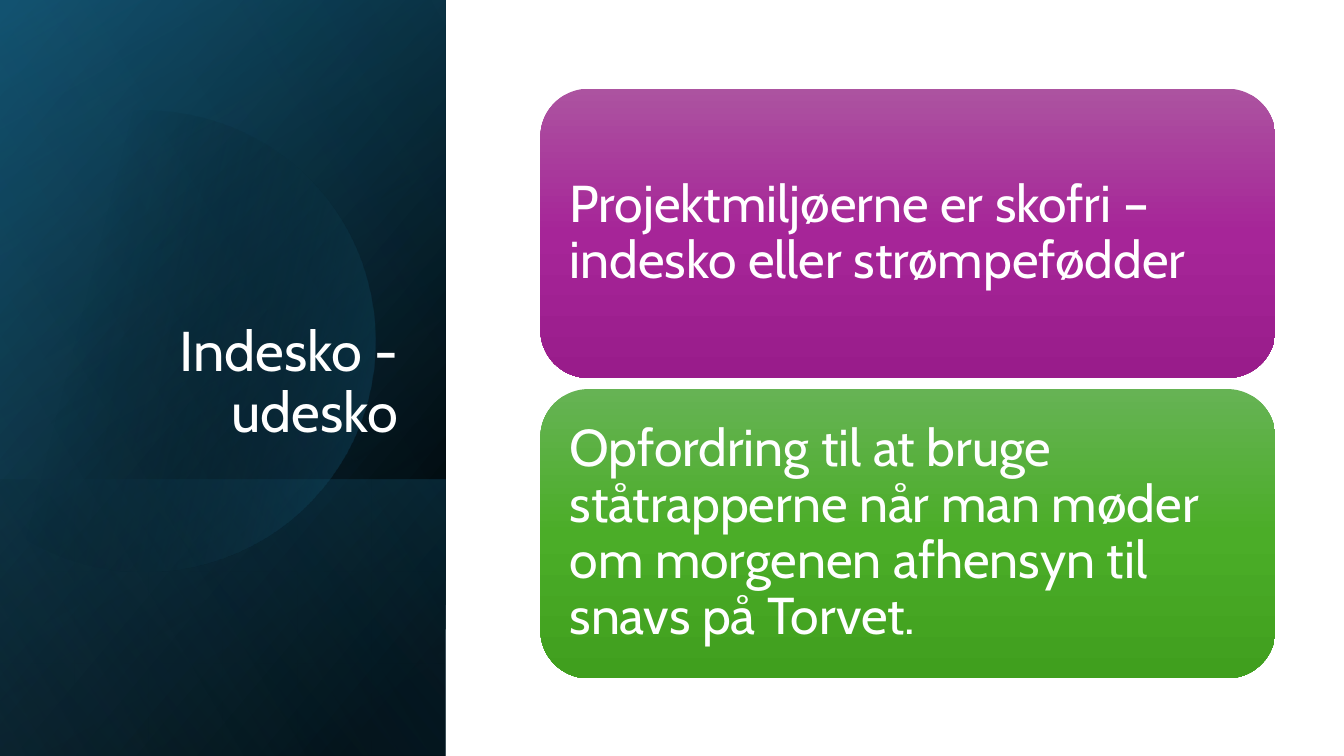
import dataclasses

import pptx
import pptx.dml.color
import pptx.enum.shapes
import pptx.enum.text
import pptx.oxml
import pptx.oxml.ns
import pptx.util

SCALE = 9144
SHAPES = pptx.enum.shapes.MSO_SHAPE
ALIGN = pptx.enum.text.PP_ALIGN
ANCHOR = pptx.enum.text.MSO_ANCHOR


@dataclasses.dataclass(frozen=True)
class Theme:
    font: str = "Cabin"
    white: str = "FFFFFF"
    black: str = "000000"
    navy: str = "104862"
    teal: str = "156082"
    sky: str = "46B1E1"
    purple: tuple = ("AC53A0", "A62598", "991C8B")
    green: tuple = ("66B354", "4BAD28", "409F1E")
    title_size: int = 40
    card_size: int = 37


THEME = Theme()

PANEL_BOX = (-154, 154, 750, 442)
PANELS_BEHIND = (
    (PANEL_BOX, ((8, THEME.black, 100), (100, THEME.navy, 100)), 50),
    (PANEL_BOX, ((0, THEME.black, 0), (99, THEME.teal, 46)), 30),
    ((84, 392, 274, 442), ((2, THEME.teal, 29), (100, THEME.black, 30)), 130),
)
PANEL_FRONT = (PANEL_BOX, ((0, THEME.black, 0), (99, THEME.sky, 11)), 120)

DISC_START = (149, 110)
DISC_CURVES = (
    ((246, 112), (335, 177), (363, 275)),
    ((398, 397), (328, 523), (207, 558)),
    ((131, 580), (53, 561), (-3, 514)),
    ((-15, 503),),
    ((-15, 175),),
    ((0, 161),),
    ((23, 142), (50, 128), (80, 119)),
    ((103, 113), (126, 110), (149, 110)),
)
DISC_STOPS = ((29, THEME.black, 0), (100, THEME.teal, 43))

CARD_LEFT, CARD_TOP, CARD_WIDTH, CARD_HEIGHT = 536, 88, 729, 287
CARD_PITCH = 298
CARD_INSET = 15
CARDS = (
    ("Projektmiljøerne er skofri – indesko eller strømpefødder", THEME.purple),
    ("Opfordring til at bruge ståtrapperne når man møder om morgenen "
     "afhensyn til snavs på Torvet.", THEME.green),
)


def px(value):
    return pptx.util.Emu(round(value * SCALE))


def set_values(target, values):
    for name, value in values.items():
        setattr(target, name, value)


def fill_gradient(shape, stops, angle):
    shape.shadow.inherit = False
    shape.line.fill.background()
    shape.fill.gradient()
    gradient = shape.element.spPr.find(pptx.oxml.ns.qn("a:gradFill"))
    stop_list = gradient.find(pptx.oxml.ns.qn("a:gsLst"))
    for old_stop in list(stop_list):
        stop_list.remove(old_stop)
    for position, color, opacity in stops:
        stop_list.append(pptx.oxml.parse_xml(
            f'<a:gs {pptx.oxml.ns.nsdecls("a")} pos="{position * 1000}">'
            f'<a:srgbClr val="{color}"><a:alpha val="{opacity * 1000}"/>'
            '</a:srgbClr></a:gs>'))
    gradient.find(pptx.oxml.ns.qn("a:lin")).set("ang", str(angle * 60000))


def write_text(shape, text, size, alignment, frame_values):
    frame = shape.text_frame
    frame.text = text
    set_values(frame, {
        "word_wrap": True,
        "auto_size": pptx.enum.text.MSO_AUTO_SIZE.NONE,
        **frame_values,
    })
    paragraph = frame.paragraphs[0]
    set_values(paragraph, {"alignment": alignment, "line_spacing": 0.9})
    font = paragraph.runs[0].font
    set_values(font, {"name": THEME.font, "size": pptx.util.Pt(size)})
    font.color.rgb = pptx.dml.color.RGBColor.from_string(THEME.white)


def add_panel(slide, box, stops, angle):
    panel = slide.shapes.add_shape(SHAPES.RECTANGLE, *map(px, box))
    panel.rotation = 90
    panel.element.spPr.xfrm.set("flipH", "1")
    fill_gradient(panel, stops, angle)


def curve_points(start, first, second, end, steps=24):
    for step in range(1, steps + 1):
        t = step / steps
        weights = ((1 - t) ** 3, 3 * t * (1 - t) ** 2, 3 * t * t * (1 - t), t ** 3)
        yield tuple(
            sum(weight * value for weight, value in zip(weights, axis))
            for axis in zip(start, first, second, end))


def add_disc(slide):
    points = [DISC_START]
    for curve in DISC_CURVES:
        points.extend(curve if len(curve) == 1 else curve_points(points[-1], *curve))
    outline = [(px(x), px(y)) for x, y in points]
    builder = slide.shapes.build_freeform(*outline[0])
    builder.add_line_segments(outline[1:], close=True)
    fill_gradient(builder.convert_to_shape(), DISC_STOPS, 14)


def place_title(slide, text):
    title = slide.shapes.title
    box = dict(zip(("left", "top", "width", "height"), map(px, (64, 184, 341, 262))))
    set_values(title, box)
    write_text(title, text, THEME.title_size, ALIGN.RIGHT,
               {"vertical_anchor": ANCHOR.BOTTOM})
    slide.shapes.element.append(title.element)


def add_card(slide, top, text, colors):
    box = (CARD_LEFT, top, CARD_WIDTH, CARD_HEIGHT)
    card = slide.shapes.add_shape(SHAPES.ROUNDED_RECTANGLE, *map(px, box))
    fill_gradient(card, zip((0, 50, 100), colors, (100, 100, 100)), 90)
    margins = {f"margin_{side}": px(CARD_INSET)
               for side in ("left", "top", "right", "bottom")}
    write_text(card, text, THEME.card_size, ALIGN.LEFT,
               {"vertical_anchor": ANCHOR.MIDDLE, **margins})


def main():
    presentation = pptx.Presentation()
    set_values(presentation, {"slide_width": px(1333), "slide_height": px(750)})
    slide = presentation.slides.add_slide(presentation.slide_layouts[5])
    for panel in PANELS_BEHIND:
        add_panel(slide, *panel)
    add_disc(slide)
    add_panel(slide, *PANEL_FRONT)
    place_title(slide, "Indesko - udesko")
    for row, (text, colors) in enumerate(CARDS):
        add_card(slide, CARD_TOP + row * CARD_PITCH, text, colors)
    presentation.save("out.pptx")


if __name__ == "__main__":
    main()
